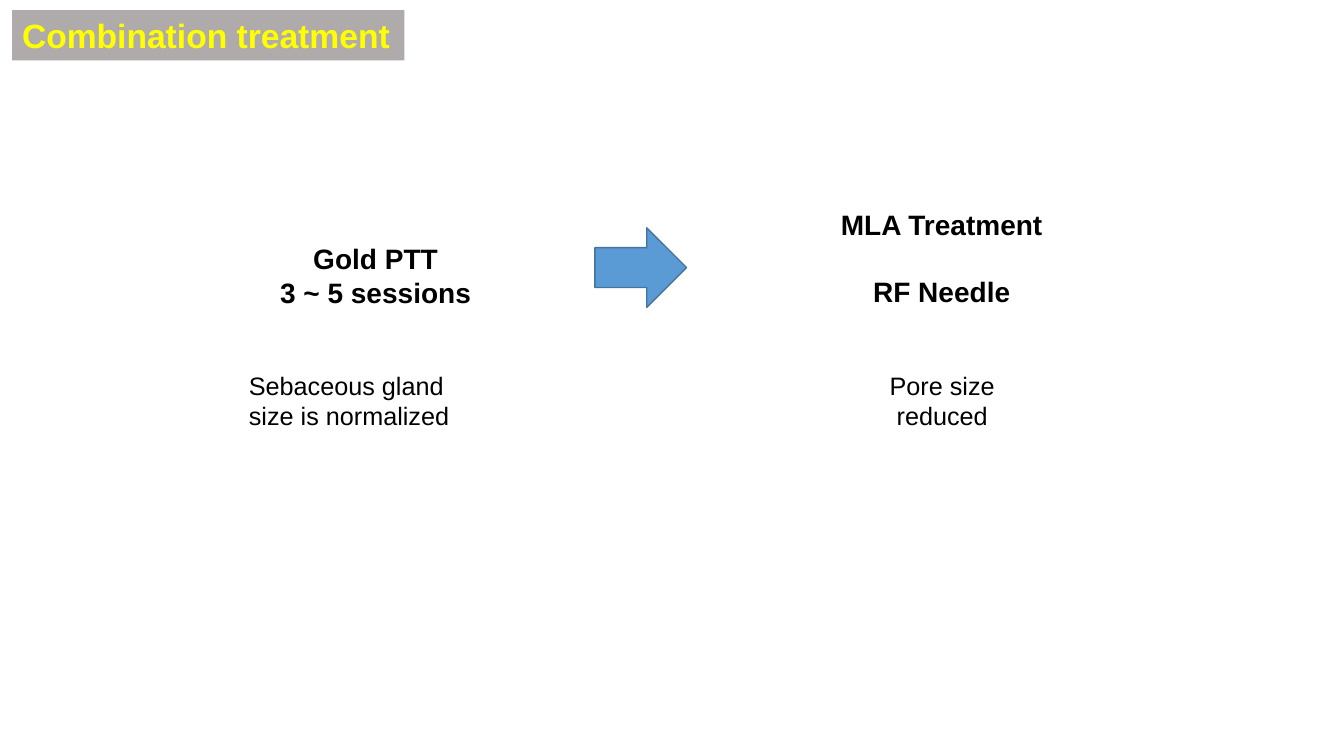
import pptx
import pptx.util
import pptx.dml.color
from pptx.enum.shapes import MSO_SHAPE
from pptx.enum.text import MSO_ANCHOR, PP_ALIGN
from pptx.util import Inches

THEME = {
    "font": "Arial",
    "title_size": 24,
    "head_size": 20,
    "body_size": 18,
    "text": "000000",
    "title": "FFFF00",
    "band": "AFABAB",
    "arrow": "5B9BD5",
    "arrow_line": "43739E",
}


def rgb(name):
    return pptx.dml.color.RGBColor.from_string(THEME[name])


def write(sp, lines, size, color, bold, align, gap=0, wrap=True):
    tf = sp.text_frame
    tf.word_wrap = wrap
    tf.vertical_anchor = MSO_ANCHOR.TOP
    for i, line in enumerate(lines):
        p = tf.paragraphs[0] if i == 0 else tf.add_paragraph()
        p.text = line
        p.alignment = align
        if i and gap:
            p.space_before = pptx.util.Pt(gap)
        p.font.name = THEME["font"]
        p.font.size = pptx.util.Pt(THEME[size])
        p.font.bold = bold
        p.font.color.rgb = rgb(color)


prs = pptx.Presentation()
prs.slide_width = Inches(13.33)
prs.slide_height = Inches(7.5)
s = prs.slides.add_slide(prs.slide_layouts[6])

texts = [
    (2.37, 3.62, 2.32, 0.71, ["Sebaceous gland", "size is normalized"], "body_size", False, PP_ALIGN.LEFT, 0),
    (2.37, 2.35, 2.71, 0.77, ["Gold PTT", "3 ~ 5 sessions"], "head_size", True, PP_ALIGN.CENTER, 0),
    (7.64, 2.01, 3.4, 1.11, ["MLA Treatment", "RF Needle"], "head_size", True, PP_ALIGN.CENTER, 24),
    (8.57, 3.62, 1.55, 0.71, ["Pore size", "reduced"], "body_size", False, PP_ALIGN.CENTER, 0),
]
for x, y, w, h, lines, size, bold, align, gap in texts:
    sp = s.shapes.add_textbox(Inches(x), Inches(y), Inches(w), Inches(h))
    write(sp, lines, size, "text", bold, align, gap)

arrow = s.shapes.add_shape(MSO_SHAPE.RIGHT_ARROW, Inches(5.9), Inches(2.26), Inches(0.91), Inches(0.79))
arrow.shadow.inherit = False
arrow.fill.solid()
arrow.fill.fore_color.rgb = rgb("arrow")
arrow.line.color.rgb = rgb("arrow_line")
arrow.line.width = pptx.util.Pt(1)

title = s.shapes.add_shape(MSO_SHAPE.RECTANGLE, Inches(0.12), Inches(0.1), Inches(3.89), Inches(0.5))
title.shadow.inherit = False
title.fill.solid()
title.fill.fore_color.rgb = rgb("band")
title.line.fill.background()
write(title, ["Combination treatment"], "title_size", "title", True, PP_ALIGN.LEFT, wrap=False)

prs.save("out.pptx")
